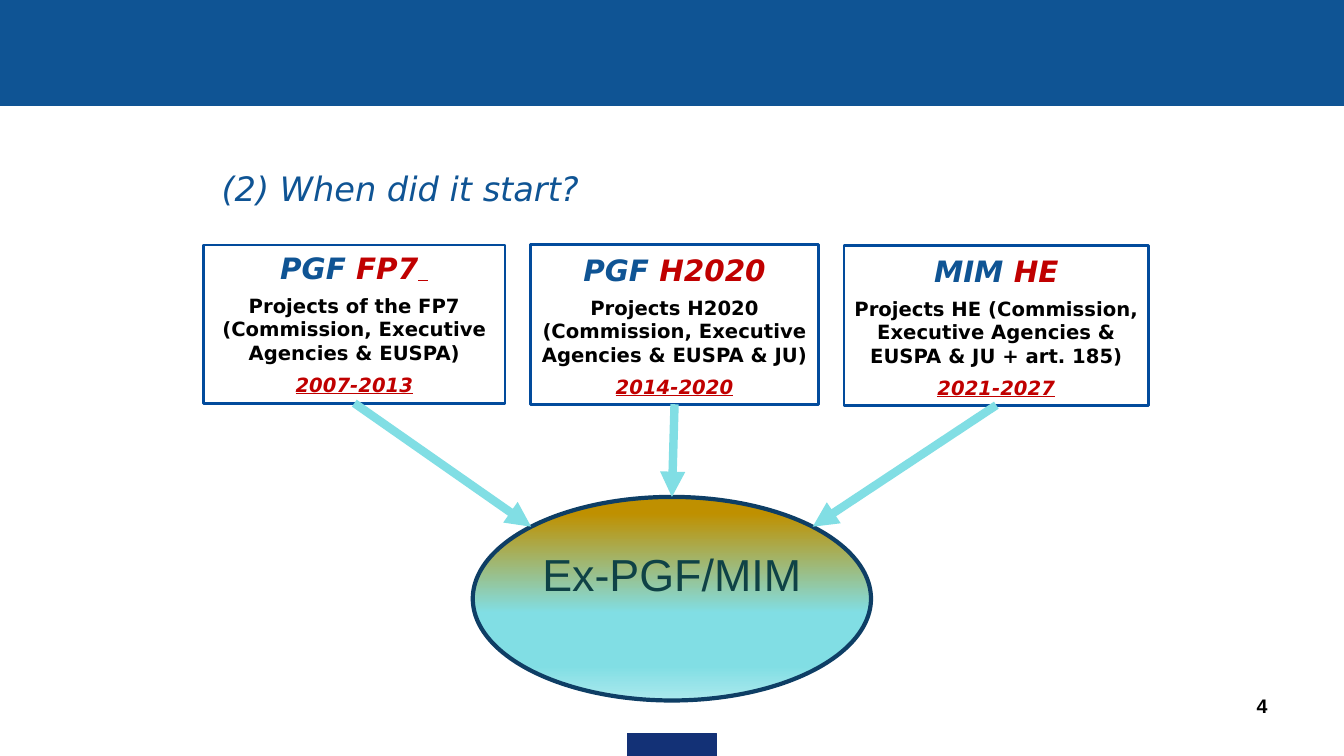
from math import sqrt

from lxml.etree import SubElement
from pptx import Presentation
from pptx.dml.color import RGBColor
from pptx.enum.shapes import MSO_CONNECTOR as Connector, MSO_SHAPE as Preset
from pptx.enum.text import MSO_ANCHOR as Anchor, MSO_AUTO_SIZE as AutoSize, PP_ALIGN as Align
from pptx.oxml.ns import qn
from pptx.util import Inches, Pt

hex_color = RGBColor.from_string
WIDE, HIGH = Inches(13.33), Inches(7.5)
BLUE, RED, BLACK, AQUA = "0F5494", "C00000", "000000", "81DEE4"


def add_block(preset, left, top, width, height, fill, line, weight):
    """Add a filled, outlined shape placed in percent of the slide's size."""
    shape = page.shapes.add_shape(
        preset, int(WIDE * left / 100), int(HIGH * top / 100),
        int(WIDE * width / 100), int(HIGH * height / 100))
    shape.shadow.inherit = False
    shape.fill.solid()
    shape.fill.fore_color.rgb = hex_color(fill)
    shape.line.color.rgb = hex_color(line)
    shape.line.width = Pt(weight)
    return shape


def write(para, text, size, color, font="DejaVu Sans", align=Align.CENTER,
          bold=False, italic=False, underline=False, before=0):
    """Append a formatted span to a paragraph."""
    para.alignment = align
    if before:
        para.space_before = Pt(before)
    span = para.add_run()
    span.text = text
    span.font.name, span.font.size = font, Pt(size)
    span.font.bold, span.font.italic, span.font.underline = bold, italic, underline
    span.font.color.rgb = hex_color(color)


deck = Presentation()
deck.slide_width, deck.slide_height = WIDE, HIGH
page = deck.slides.add_slide(deck.slide_layouts[6])

# Header band and footer tab
add_block(Preset.RECTANGLE, 0, 0, 100, 14, BLUE, BLUE, 0.75)
add_block(Preset.RECTANGLE, 46.66, 97.07, 6.68, 2.93, "133176", "133176", 0.75)

# Heading and page number
labels = [
    ("(2) When did it start?", (15.75, 21.6, 67.52, 8.4),
     dict(size=24, color=BLUE, italic=True, align=Align.LEFT)),
    ("4", (71.72, 91.07, 23.33, 6.93),
     dict(size=14, color=BLACK, font="Arial", bold=True, align=Align.RIGHT)),
]
for text, (left, top, width, height), style in labels:
    box = page.shapes.add_textbox(int(WIDE * left / 100), int(HIGH * top / 100),
                                  int(WIDE * width / 100), int(HIGH * height / 100))
    box.text_frame.word_wrap = True
    write(box.text_frame.paragraphs[0], text, **style)

# Programme boxes, side by side with an equal gap
programmes = [
    ("PGF ", "FP7", "Projects of the FP7 (Commission, Executive Agencies & EUSPA)",
     "2007-2013", 32.4, 22.43, 20.93),
    ("PGF ", "H2020", "Projects H2020 (Commission, Executive Agencies & EUSPA & JU)",
     "2014-2020", 32.4, 21.46, 21.07),
    ("MIM ", "HE", "Projects HE (Commission, Executive Agencies & EUSPA & JU + art. 185)",
     "2021-2027", 32.53, 22.66, 21.07),
]
GAP = 1.88
left = 15.15
boxes = []
for team, programme, scope, years, top, width, height in programmes:
    box = add_block(Preset.RECTANGLE, left, top, width, height, "FFFFFF", "024B9C", 2)
    left += width + GAP
    frame = box.text_frame
    frame.word_wrap = True
    frame.auto_size = AutoSize.SHAPE_TO_FIT_TEXT
    frame.vertical_anchor = Anchor.TOP
    if boxes:
        frame.margin_left = frame.margin_right = frame.margin_top = Inches(0.07)
        frame.margin_bottom = Inches(0.04)
    title = frame.paragraphs[0]
    write(title, team, 21, BLUE, bold=True, italic=True)
    write(title, programme, 21, RED, bold=True, italic=True)
    if not boxes:
        write(title, " ", 21, RED, bold=True, italic=True, underline=True)
    write(frame.add_paragraph(), scope, 14, BLACK, bold=True, before=6)
    write(frame.add_paragraph(), years, 14, RED, bold=True, italic=True,
          underline=True, before=6)
    boxes.append(box)

# Merged unit with a vertical gradient
unit = add_block(Preset.OVAL, 35.18, 65.73, 29.63, 26.93, AQUA, "0E3E65", 3)
unit.fill.gradient()
unit.fill.gradient_angle = 270
stops = unit._element.spPr.find(qn("a:gradFill")).find(qn("a:gsLst"))
for stop in list(stops):
    stops.remove(stop)
for position, color in [(8, "BF9000"), (57, AQUA), (83, AQUA), (100, "ABE9ED")]:
    stop = SubElement(stops, qn("a:gs"), pos=str(position * 1000))
    SubElement(stop, qn("a:srgbClr"), val=color)
unit.text_frame.word_wrap = True
unit.text_frame.vertical_anchor = Anchor.MIDDLE
unit.text_frame.margin_bottom = Inches(0.55)
write(unit.text_frame.paragraphs[0], "Ex-PGF/MIM", 32, "0F4246", font="Arial")

# Arrows from the boxes to the unit's upper left, top and upper right
for box, side in zip(boxes, (-1, 0, 1)):
    reach = side / sqrt(2)
    end_x = int(unit.left + unit.width / 2 * (1 + reach))
    end_y = int(unit.top + unit.height / 2 * (1 - sqrt(1 - reach ** 2)))
    arrow = page.shapes.add_connector(
        Connector.STRAIGHT, box.left + box.width // 2, box.top + box.height, end_x, end_y)
    arrow.begin_connect(box, 2)
    if side == 0:
        arrow.end_connect(unit, 0)
    arrow.line.color.rgb = hex_color(AQUA)
    arrow.line.width = Pt(6)
    SubElement(arrow.line._get_or_add_ln(), qn("a:tailEnd"), type="triangle")
    SubElement(arrow._element.spPr, qn("a:effectLst"))

deck.save("out.pptx")
